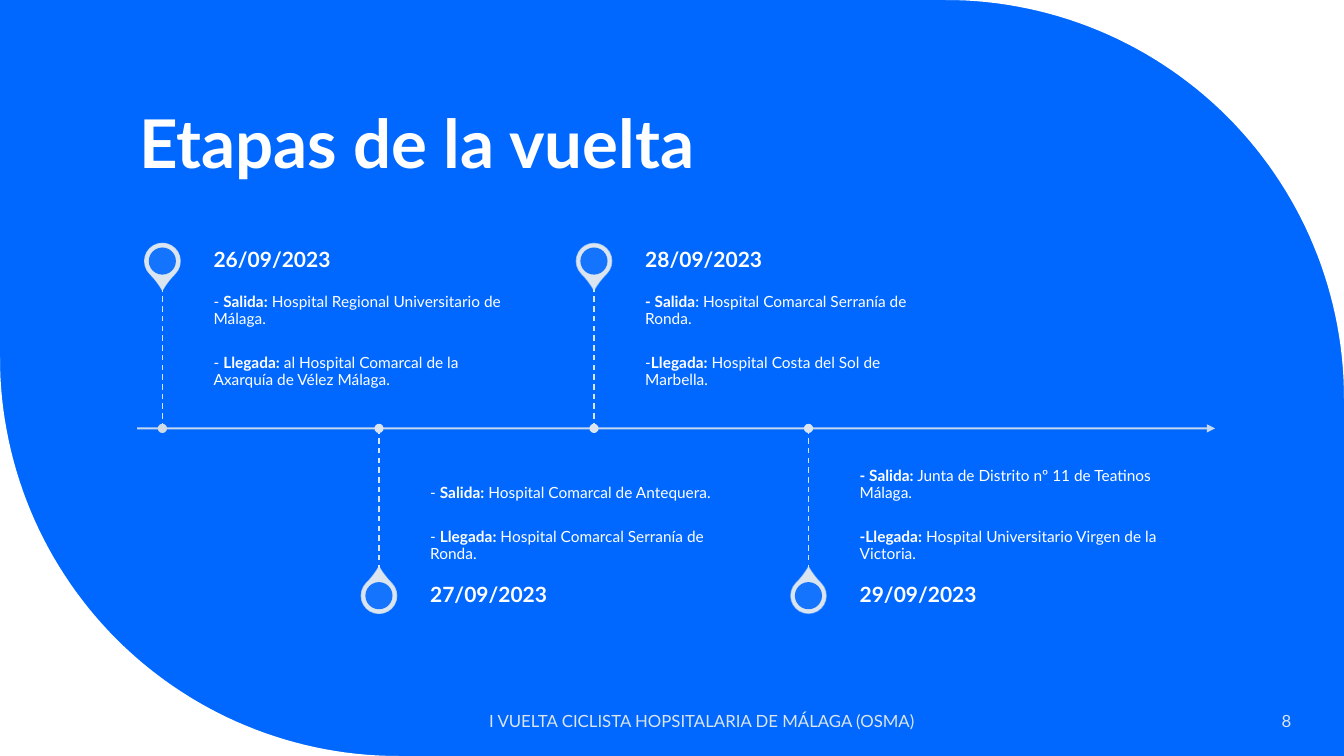
import math
from dataclasses import dataclass

from lxml import etree
from pptx import Presentation
from pptx.dml.color import RGBColor
from pptx.enum.dml import MSO_LINE
from pptx.enum.shapes import MSO_CONNECTOR, MSO_SHAPE
from pptx.enum.text import MSO_ANCHOR, PP_ALIGN
from pptx.oxml.ns import qn
from pptx.util import Pt

TOP, MIDDLE, BOTTOM = MSO_ANCHOR.TOP, MSO_ANCHOR.MIDDLE, MSO_ANCHOR.BOTTOM
LEFT, CENTER, RIGHT = PP_ALIGN.LEFT, PP_ALIGN.CENTER, PP_ALIGN.RIGHT
STRAIGHT, DASH = MSO_CONNECTOR.STRAIGHT, MSO_LINE.DASH
TEARDROP, OVAL = MSO_SHAPE.TEAR, MSO_SHAPE.OVAL

SLIDE_WIDTH, SLIDE_HEIGHT = 960, 540
CORNER_RADIUS = 284.5
AXIS_Y = 306
DATE_HEIGHT, DETAIL_HEIGHT = 36, 101.5
TEXT_OFFSET, TEXT_WIDTH = 36.6, 218.5
PIN_SIZE, HOLE_SIZE, DOT_SIZE = 25.2, 19.4, 6.6


@dataclass(frozen=True)
class Theme:
    font: str = "Lato"
    blue: RGBColor = RGBColor(0x00, 0x68, 0xFF)
    white: RGBColor = RGBColor(0xFF, 0xFF, 0xFF)
    pale: RGBColor = RGBColor(0xDA, 0xE5, 0xEF)
    pale_dark: RGBColor = RGBColor(0xD0, 0xDB, 0xE4)
    title: float = 48
    date: float = 15
    footer: float = 12
    detail: float = 11


THEME = Theme()


@dataclass(frozen=True)
class Stage:
    """One stage; each detail is a list of (text, bold) runs."""
    x: float
    above: bool
    date: str
    details: list
    outline_opacity: int
    dot_color: RGBColor = THEME.pale


STAGES = [
    Stage(116, True, "26/09/2023", [
        [("- ", False), ("Salida:", True), (" Hospital Regional Universitario de Málaga.", False)],
        [("- ", False), ("Llegada:", True),
         (" al Hospital Comarcal de la Axarquía de Vélez Málaga.", False)],
    ], 90, THEME.pale_dark),
    Stage(270.7, False, "27/09/2023", [
        [("- ", False), ("Salida:", True), (" Hospital Comarcal de Antequera.", False)],
        [("- ", False), ("Llegada:", True), (" Hospital Comarcal Serranía de Ronda.", False)],
    ], 77),
    Stage(424.3, True, "28/09/2023", [
        [("- Salida", True), (": Hospital Comarcal Serranía de Ronda.", False)],
        [("-", False), ("Llegada:", True), (" Hospital Costa del Sol de Marbella.", False)],
    ], 63),
    Stage(577.5, False, "29/09/2023", [
        [("- Salida:", True), (" Junta de Distrito nº 11 de Teatinos Málaga.", False)],
        [("-Llegada:", True), (" Hospital Universitario Virgen de la Victoria.", False)],
    ], 50),
]


class SlideBuilder:
    def __init__(self, slide, theme):
        self.slide = slide
        self.theme = theme
        slide.background.fill.solid()
        slide.background.fill.fore_color.rgb = theme.blue

    def set_opacity(self, color_parent, percent):
        color = color_parent.find(".//" + qn("a:srgbClr"))
        etree.SubElement(color, qn("a:alpha")).set("val", str(percent * 1000))

    def corner(self, center_x, center_y, start_angle):
        """Fill the area between a quarter circle and the slide corner beyond it."""
        angles = [math.radians(start_angle + step * 1.5) for step in range(61)]
        points = [(Pt(center_x + CORNER_RADIUS * math.cos(angle)),
                   Pt(center_y + CORNER_RADIUS * math.sin(angle))) for angle in angles]
        reach = CORNER_RADIUS * math.sqrt(2)
        middle = math.radians(start_angle + 45)
        points.append((Pt(center_x + reach * math.cos(middle)),
                       Pt(center_y + reach * math.sin(middle))))
        builder = self.slide.shapes.build_freeform(*points[0])
        builder.add_line_segments(points[1:], close=True)
        shape = builder.convert_to_shape()
        shape.shadow.inherit = False
        shape.fill.solid()
        shape.fill.fore_color.rgb = self.theme.white
        shape.line.fill.background()

    def text(self, left, top, width, height, paragraphs, size, color=None, anchor=MIDDLE,
             align=LEFT, insets=(7.2, 3.6, 7.2, 3.6), line_spacing=1.0, after=0, gap=0):
        """Add paragraphs of (text, bold) runs; gap is the extra space between them."""
        box = self.slide.shapes.add_textbox(Pt(left), Pt(top), Pt(width), Pt(height))
        frame = box.text_frame
        frame.word_wrap = True
        frame.vertical_anchor = anchor
        (frame.margin_left, frame.margin_top,
         frame.margin_right, frame.margin_bottom) = map(Pt, insets)
        for index, runs in enumerate(paragraphs):
            paragraph = frame.add_paragraph() if index else frame.paragraphs[0]
            paragraph.alignment = align
            paragraph.line_spacing = line_spacing
            paragraph.space_after = Pt(after)
            paragraph.space_before = Pt(gap if index else 0)
            paragraph.font.name = self.theme.font
            paragraph.font.size = Pt(size)
            paragraph.font.color.rgb = color or self.theme.white
            for text, bold in runs:
                run = paragraph.add_run()
                run.text = text
                run.font.bold = bold

    def line(self, start, end, width, dashed=False, arrow=False, opacity=100):
        connector = self.slide.shapes.add_connector(STRAIGHT, *map(Pt, start + end))
        connector.line.color.rgb = self.theme.pale
        connector.line.width = Pt(width)
        if dashed:
            connector.line.dash_style = DASH
        properties = connector._element.spPr
        outline = properties.find(qn("a:ln"))
        if opacity < 100:
            self.set_opacity(outline, opacity)
        if arrow:
            etree.SubElement(outline, qn("a:tailEnd")).set("type", "triangle")
        etree.SubElement(properties, qn("a:effectLst"))

    def marker(self, kind, center_x, center_y, size, color):
        shape = self.slide.shapes.add_shape(
            kind, Pt(center_x - size / 2), Pt(center_y - size / 2), Pt(size), Pt(size))
        shape.shadow.inherit = False
        shape.fill.solid()
        shape.fill.fore_color.rgb = color
        shape.line.fill.background()
        return shape

    def pin(self, x, y, rotation, outline_opacity):
        drop = self.marker(TEARDROP, x, y, PIN_SIZE, self.theme.pale)
        drop.adjustments[0] = 1.15
        drop.rotation = rotation
        drop.line.color.rgb = self.theme.pale
        drop.line.width = Pt(1)
        self.set_opacity(drop._element.spPr.find(qn("a:ln")), outline_opacity)
        hole = self.marker(OVAL, x, y, HOLE_SIZE, self.theme.blue)
        self.set_opacity(hole._element.spPr.find(qn("a:solidFill")), 90)

    def stage(self, stage):
        side = -1 if stage.above else 1
        stem_end = AXIS_Y + side * DETAIL_HEIGHT
        date_middle = stem_end + side * DATE_HEIGHT / 2
        text_left = stage.x + TEXT_OFFSET
        self.pin(stage.x, date_middle, 135 if stage.above else 315, stage.outline_opacity)
        self.text(text_left, min(AXIS_Y, stem_end), TEXT_WIDTH, DETAIL_HEIGHT, stage.details,
                  self.theme.detail, anchor=TOP if stage.above else BOTTOM,
                  insets=(0, 5.8, 5.8, 7.9) if stage.above else (0, 7.9, 0, 5.8),
                  line_spacing=0.9, after=3.85, gap=15.7)
        self.text(text_left, date_middle - DATE_HEIGHT / 2, TEXT_WIDTH, DATE_HEIGHT,
                  [[(stage.date, True)]], self.theme.date, insets=(0, 0, 7.2, 0),
                  line_spacing=0.9, after=5.25)
        self.line((stage.x, AXIS_Y), (stage.x, stem_end), 1, dashed=True)
        self.marker(OVAL, stage.x, AXIS_Y, DOT_SIZE, stage.dot_color)


def main():
    presentation = Presentation()
    presentation.slide_width, presentation.slide_height = Pt(SLIDE_WIDTH), Pt(SLIDE_HEIGHT)
    slide = presentation.slides.add_slide(presentation.slide_layouts[6])
    builder = SlideBuilder(slide, THEME)
    builder.corner(SLIDE_WIDTH - CORNER_RADIUS, CORNER_RADIUS, -90)
    builder.corner(CORNER_RADIUS, SLIDE_HEIGHT - CORNER_RADIUS, 90)
    builder.text(92.2, 30.2, 769.7, 104.4, [[("Etapas de la vuelta", True)]], THEME.title,
                 anchor=BOTTOM, line_spacing=0.9)
    builder.line((98, AXIS_Y), (868, AXIS_Y), 1.5, arrow=True, opacity=90)
    for stage in STAGES:
        builder.stage(stage)
    builder.text(318.2, 500.4, 366.5, 28.8,
                 [[("I VUELTA CICLISTA HOPSITALARIA DE MÁLAGA (OSMA)", False)]],
                 THEME.footer, THEME.pale, align=CENTER)
    builder.text(799.2, 500.4, 130.3, 28.8, [[("8", False)]],
                 THEME.footer, THEME.pale, align=RIGHT)
    presentation.save("out.pptx")


if __name__ == "__main__":
    main()
